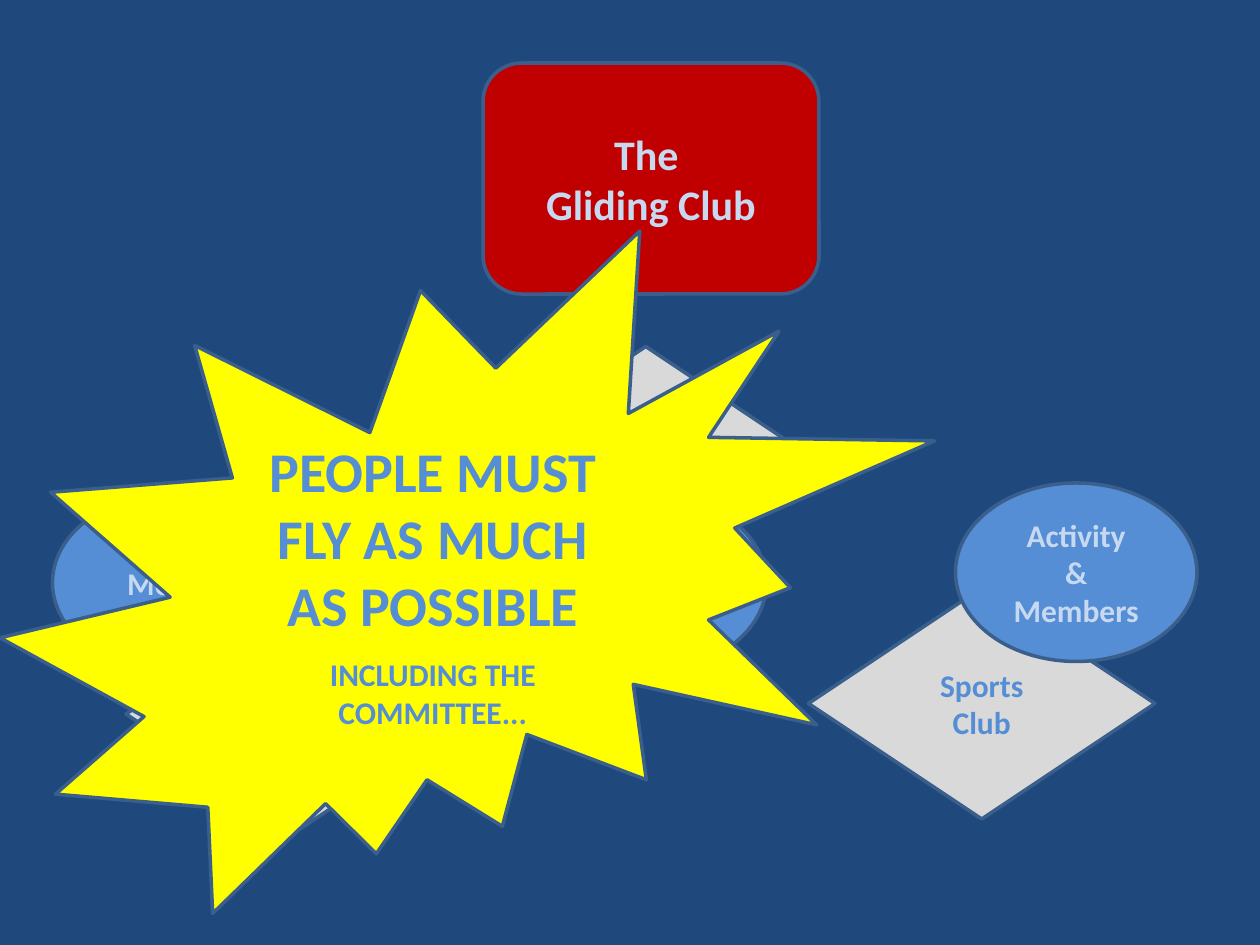
from pptx import Presentation
from pptx import util as u
from pptx.dml.color import RGBColor
from pptx.enum import shapes, text

PX = 7620  # EMU per px, 120 px to the inch
NAVY = RGBColor(0x1F, 0x49, 0x7D)
OUTLINE = RGBColor(0x3A, 0x5F, 0x8C)
GREY = RGBColor(0xD9, 0xD9, 0xD9)
BLUE = RGBColor(0x55, 0x8E, 0xD5)
PALE = RGBColor(0xC6, 0xD9, 0xF1)
RED = RGBColor(0xC0, 0x00, 0x00)
YELLOW = RGBColor(0xFF, 0xFF, 0x00)
KIND = shapes.MSO_SHAPE
DIAMOND_SIZE = (330, 220)
ELLIPSE_SIZE = (230, 170)


def add_block(page, kind, box, fill, lines=(), color=BLUE, gap=0):
    """Add an outlined shape with centred (wording, size) lines."""
    shape = page.shapes.add_shape(kind, *(u.Emu(n * PX) for n in box))
    shape.shadow.inherit = False
    shape.fill.solid()
    shape.fill.fore_color.rgb = fill
    shape.line.color.rgb = OUTLINE
    shape.line.width = u.Pt(2)
    frame = shape.text_frame
    frame.word_wrap = True
    frame.vertical_anchor = text.MSO_ANCHOR.MIDDLE
    for index, (wording, size) in enumerate(lines):
        para = frame.add_paragraph() if index else frame.paragraphs[0]
        para.alignment = text.PP_ALIGN.CENTER
        if index and gap:
            para.space_before = u.Pt(gap)
        span = para.add_run()
        span.text = wording
        span.font.color.rgb = color
        for name, value in {"name": "Calibri", "size": u.Pt(size), "bold": True}.items():
            setattr(span.font, name, value)


def add_area(page, left, top, offset, labels=(), aims=()):
    """Add a diamond for one area of the club, with its ellipse on top."""
    add_block(page, KIND.DIAMOND, (left, top, *DIAMOND_SIZE), GREY,
              [(label, 18) for label in labels])
    across, down = offset
    add_block(page, KIND.OVAL, (left + across, top + down, *ELLIPSE_SIZE), BLUE,
              [(aim, 18) for aim in aims], PALE)


def add_club(page, box):
    add_block(page, KIND.ROUNDED_RECTANGLE, box, RED,
              [("The ", 24), ("Gliding Club", 24)], PALE)


def add_message(page, box):
    add_block(page, KIND.EXPLOSION2, box, YELLOW,
              [("PEOPLE MUST FLY AS MUCH AS POSSIBLE", 32),
               ("INCLUDING THE COMMITTEE...", 18)], gap=10)


def main():
    deck = Presentation()
    deck.slide_width, deck.slide_height = u.Inches(10), u.Inches(7.5)
    page = deck.slides.add_slide(deck.slide_layouts[6])
    page.background.fill.solid()
    page.background.fill.fore_color.rgb = NAVY

    # Club and its three areas
    add_area(page, 450, 330, (50, 140))
    add_club(page, (460, 60, 320, 220))
    add_area(page, 120, 570, (-70, -100), aims=["Money"])
    add_area(page, 770, 560, (140, -100), ["Sports Club"], ["Activity", "& Members"])

    # Message burst in front
    add_message(page, (0, 220, 890, 650))
    deck.save("out.pptx")


if __name__ == "__main__":
    main()
